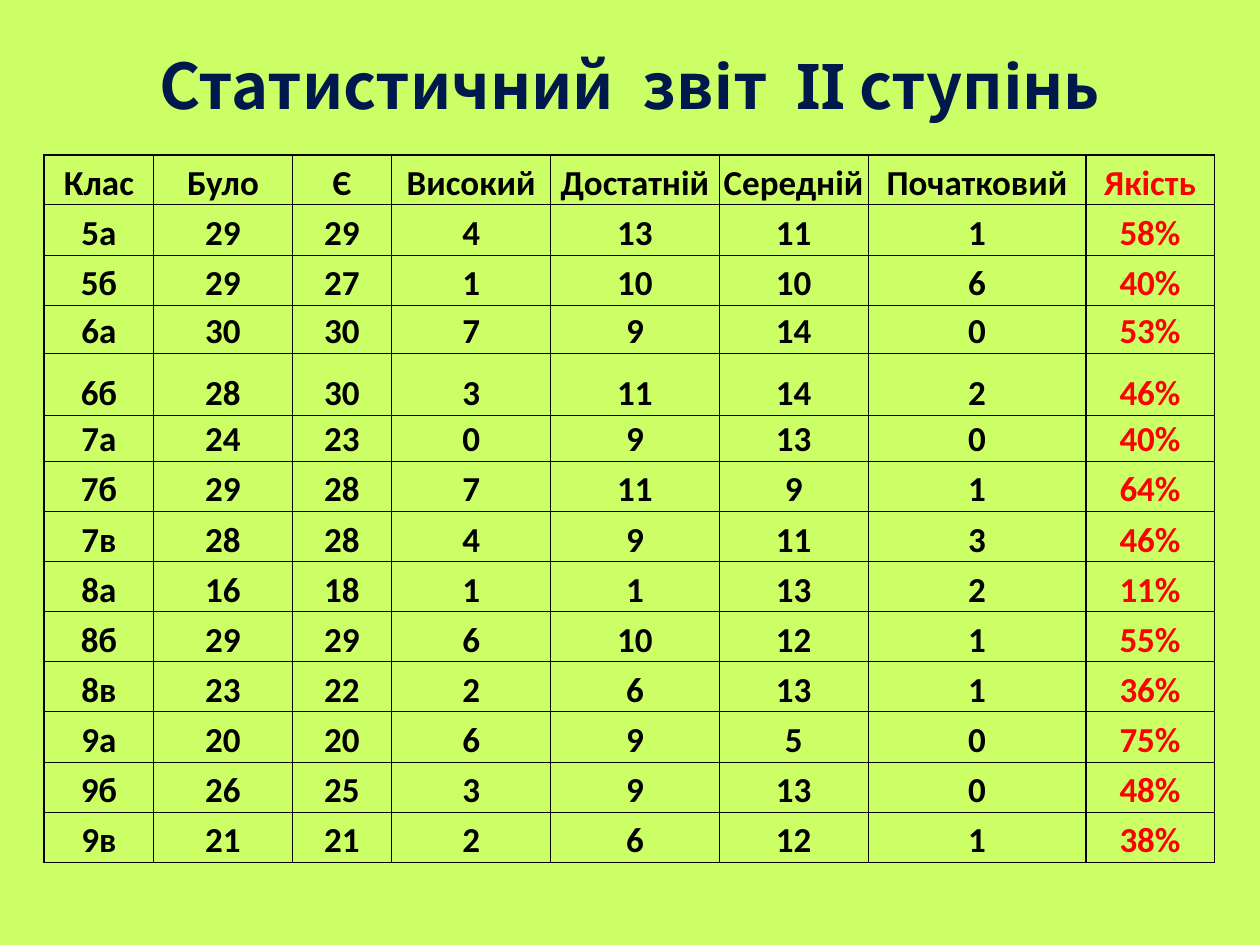
from lxml import etree
from pptx import Presentation
from pptx import util as u
from pptx.dml.color import RGBColor
from pptx.enum import text
from pptx.oxml.ns import qn

COLORS = {"background": "CCFF66", "title": "00194C", "text": "000000",
          "quality": "FF0000", "border": "000000"}

HEADER = ["Клас", "Було", "Є", "Високий", "Достатній", "Середній",
          "Початковий", "Якість"]
CLASSES = [
    ["5а", 29, 29, 4, 13, 11, 1, "58%"],
    ["5б", 29, 27, 1, 10, 10, 6, "40%"],
    ["6а", 30, 30, 7, 9, 14, 0, "53%"],
    ["6б", 28, 30, 3, 11, 14, 2, "46%"],
    ["7а", 24, 23, 0, 9, 13, 0, "40%"],
    ["7б", 29, 28, 7, 11, 9, 1, "64%"],
    ["7в", 28, 28, 4, 9, 11, 3, "46%"],
    ["8а", 16, 18, 1, 1, 13, 2, "11%"],
    ["8б", 29, 29, 6, 10, 12, 1, "55%"],
    ["8в", 23, 22, 2, 6, 13, 1, "36%"],
    ["9а", 20, 20, 6, 9, 5, 0, "75%"],
    ["9б", 26, 25, 3, 9, 13, 0, "48%"],
    ["9в", 21, 21, 2, 6, 12, 1, "38%"],
]
COL_WIDTHS = [2.21, 2.79, 2.01, 3.2, 3.4, 3, 4.39, 2.59]
ROW_HEIGHT = 1.01
SPECIAL_HEIGHTS = {"6а": 0.97, "6б": 1.25, "7а": 0.93}


def set_all(obj, values):
    for name, value in values.items():
        setattr(obj, name, value)


class SlideBuilder:
    title_font = {"name": "Noto Sans CJK KR", "size": u.Pt(36), "bold": True}
    cell_font = {"name": "Calibri", "size": u.Pt(20), "bold": True}
    cell_format = {"vertical_anchor": text.MSO_ANCHOR.BOTTOM,
                   "margin_left": u.Cm(0.03), "margin_right": u.Cm(0.03),
                   "margin_top": u.Cm(0.03), "margin_bottom": 0}
    thin, thick = 0.5, 1

    def __init__(self, prs):
        self.slide = prs.slides.add_slide(prs.slide_layouts[5])
        fill = self.slide.background.fill
        fill.solid()
        fill.fore_color.rgb = RGBColor.from_string(COLORS["background"])

    def centred_text(self, tf, content, font, color):
        p = tf.paragraphs[0]
        p.alignment = text.PP_ALIGN.CENTER
        r = p.add_run()
        r.text = str(content)
        set_all(r.font, font)
        r.font.color.rgb = RGBColor.from_string(COLORS[color])

    def title(self, content, left, top, width, height):
        sp = self.slide.shapes.title
        set_all(sp, {"left": u.Cm(left), "top": u.Cm(top),
                     "width": u.Cm(width), "height": u.Cm(height)})
        set_all(sp.text_frame, {"vertical_anchor": text.MSO_ANCHOR.MIDDLE,
                                "word_wrap": True,
                                "auto_size": text.MSO_AUTO_SIZE.NONE})
        self.centred_text(sp.text_frame, content, self.title_font, "title")

    def borders(self, cell, widths):
        """Put side lines, given in points, ahead of the fill as the schema asks."""
        tc_pr = cell._tc.get_or_add_tcPr()
        for i, (side, width) in enumerate(widths.items()):
            ln = etree.Element(qn(f"a:ln{side}"), w=str(u.Pt(width)))
            fill = etree.SubElement(ln, qn("a:solidFill"))
            etree.SubElement(fill, qn("a:srgbClr"), val=COLORS["border"])
            tc_pr.insert(i, ln)

    def table(self, rows, left, top, col_widths, row_heights):
        frame = self.slide.shapes.add_table(
            len(rows), len(col_widths), u.Cm(left), u.Cm(top),
            u.Cm(sum(col_widths)), u.Cm(sum(row_heights)))
        table = frame.table
        set_all(table, {"first_row": False, "horz_banding": False})
        for column, width in zip(table.columns, col_widths):
            column.width = u.Cm(width)
        for row, height in zip(table.rows, row_heights):
            row.height = u.Cm(height)

        last = len(col_widths) - 1
        for i, values in enumerate(rows):
            for j, value in enumerate(values):
                cell = table.cell(i, j)
                set_all(cell, self.cell_format)
                cell.fill.background()
                self.centred_text(cell.text_frame, value, self.cell_font,
                                  "quality" if j == last else "text")
                self.borders(cell, {
                    "L": self.thick if j in (0, last) else self.thin,
                    "R": self.thick if j >= last - 1 else self.thin,
                    "T": self.thick if i == 0 else self.thin,
                    "B": self.thin})


def main():
    prs = Presentation()
    set_all(prs, {"slide_width": u.Cm(25.4), "slide_height": u.Cm(19.05)})
    builder = SlideBuilder(prs)
    builder.title("Статистичний  звіт  ІІ ступінь", 0, 0.64, 25.4, 2.11)
    rows = [HEADER] + CLASSES
    heights = [SPECIAL_HEIGHTS.get(row[0], ROW_HEIGHT) for row in rows]
    builder.table(rows, 0.89, 3.12, COL_WIDTHS, heights)
    prs.save("out.pptx")


if __name__ == "__main__":
    main()
